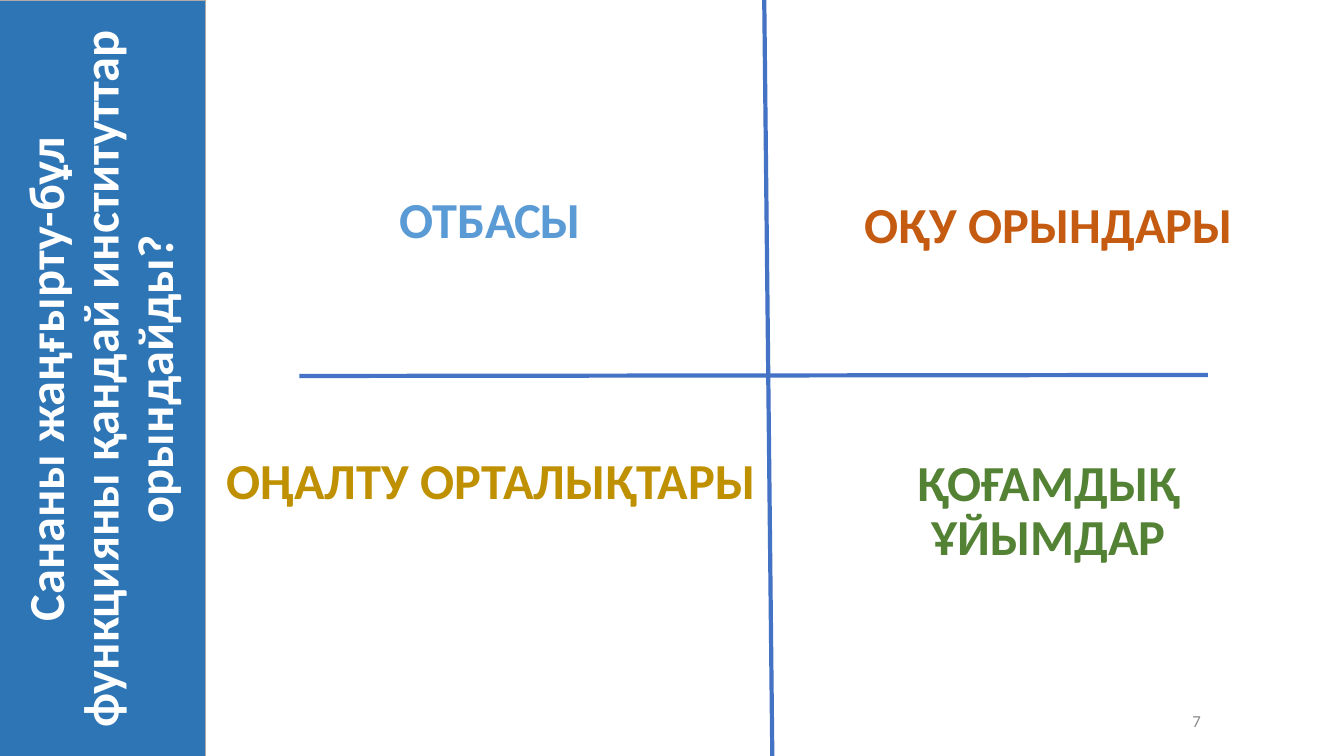
from dataclasses import dataclass

from lxml.etree import SubElement
from pptx import Presentation
from pptx.dml.color import RGBColor as RGB
from pptx.enum.shapes import MSO_CONNECTOR as CONN, MSO_SHAPE as SHAPE
from pptx.enum.text import MSO_ANCHOR as ANCHOR, PP_ALIGN as ALIGN
from pptx.oxml.ns import qn
from pptx.slide import Slide
from pptx.util import Emu, Pt

UNIT = 9144  # EMU per px, 100 px to the inch
BLUE = "4472C4"
HEAD = {"line_spacing": 0.9, "space_before": Pt(10)}


@dataclass
class Label:
    text: str
    box: tuple[int, int, int, int]
    color: str
    size: int = 36
    bold: bool = True
    align: ALIGN = ALIGN.CENTER
    anchor: ANCHOR = ANCHOR.TOP
    turn: int = 0


@dataclass
class Rule:
    start: tuple[int, int]
    end: tuple[int, int]


def px(num: int) -> Emu:
    return Emu(num * UNIT)


def paint(code: str) -> RGB:
    return RGB.from_string(code)


def apply(item: object, form: dict) -> None:
    for name, value in form.items():
        setattr(item, name, value)


def add_label(slide: Slide, label: Label) -> None:
    box = slide.shapes.add_textbox(*map(px, label.box))
    box.rotation = label.turn
    frame = box.text_frame
    apply(frame, {"word_wrap": True, "vertical_anchor": label.anchor})
    para = frame.paragraphs[0]
    para.alignment = label.align
    if label.bold:
        apply(para, HEAD)
    run = para.add_run()
    run.text = label.text
    apply(run.font, {"name": "Calibri", "size": Pt(label.size), "bold": label.bold})
    run.font.color.rgb = paint(label.color)


def add_rule(slide: Slide, rule: Rule) -> None:
    line = slide.shapes.add_connector(CONN.STRAIGHT, *map(px, rule.start + rule.end))
    line.line.color.rgb = paint(BLUE)
    line.line.width = Pt(3)
    SubElement(line._element.spPr, qn("a:effectLst"))


def add_band(slide: Slide) -> None:
    band = slide.shapes.add_shape(SHAPE.RECTANGLE, *map(px, (-2, 0, 206, 751)))
    band.shadow.inherit = False
    band.fill.solid()
    band.fill.fore_color.rgb = paint("2E75B6")
    band.line.color.rgb = paint("AFABAB")
    band.line.width = Pt(1)


LABELS = [
    Label("7", (901, 695, 300, 40), "8C8C8C", 12, False, ALIGN.RIGHT, ANCHOR.MIDDLE),
    Label("ҚОҒАМДЫҚ ҰЙЫМДАР", (808, 449, 464, 161), "548235"),
    Label("ОҢАЛТУ ОРТАЛЫҚТАРЫ", (208, 447, 558, 132), "BF9000"),
    Label("ОТБАСЫ", (242, 189, 489, 143), "5B9BD5"),
    Label("ОҚУ ОРЫНДАРЫ", (790, 193, 500, 109), "C55A11"),
]
RULES = [Rule((758, 0), (766, 750)), Rule((297, 373), (1198, 372))]
TITLE = Label(
    "Сананы жаңғырту-бұл функцияны қандай институттар орындайды?",
    (-264, 273, 731, 206), "FFFFFF", anchor=ANCHOR.MIDDLE, turn=270,
)


def main() -> None:
    deck = Presentation()
    apply(deck, {"slide_width": px(1333), "slide_height": px(750)})
    slide = deck.slides.add_slide(deck.slide_layouts[6])

    # Four quarters and the page number
    for label in LABELS:
        add_label(slide, label)

    # Crossing lines
    for rule in RULES:
        add_rule(slide, rule)

    # Side band with the turned title
    add_band(slide)
    add_label(slide, TITLE)

    deck.save("out.pptx")


if __name__ == "__main__":
    main()
